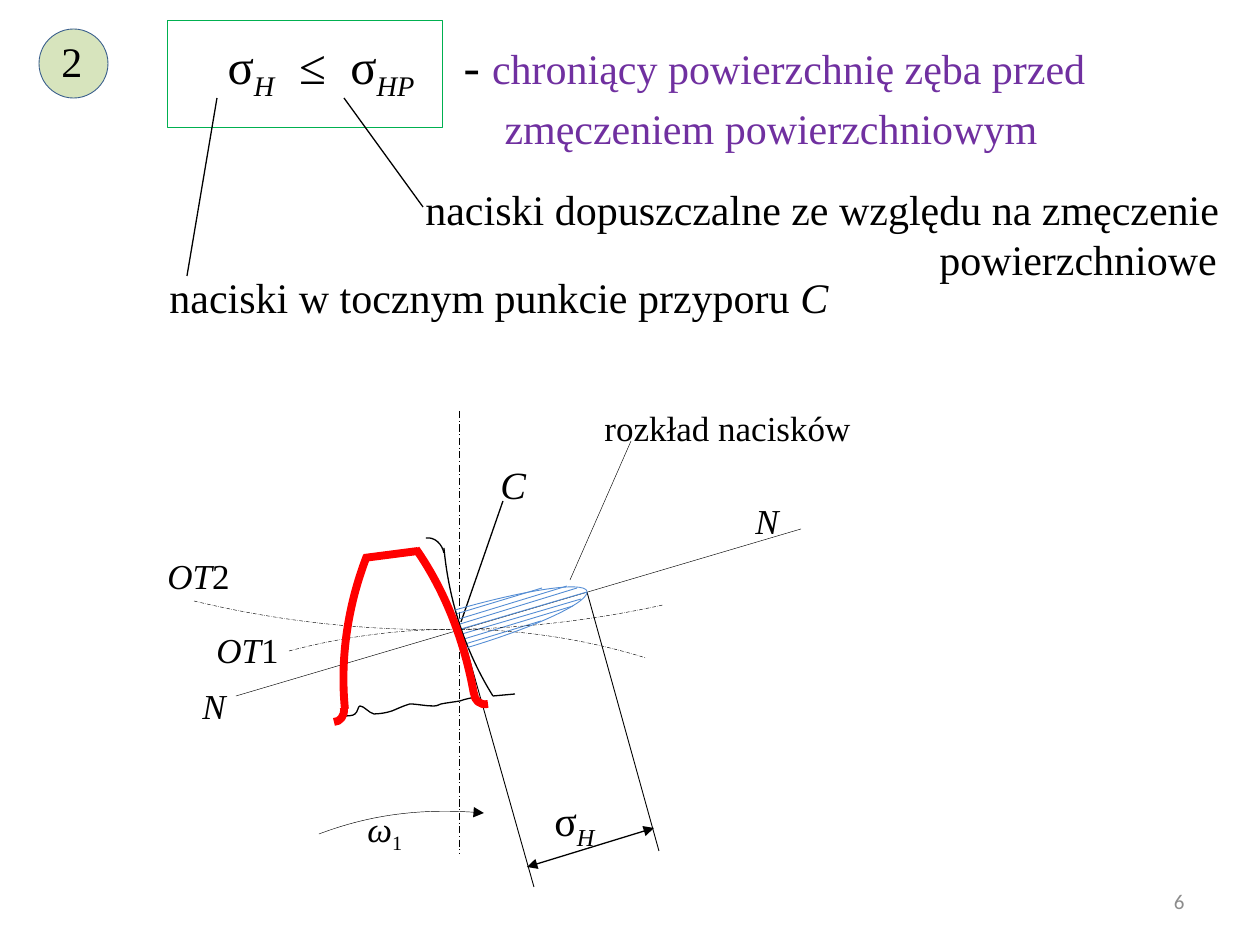
import math

from lxml import etree
from pptx import Presentation
from pptx.dml.color import RGBColor
from pptx.enum.dml import MSO_LINE
from pptx.enum.shapes import MSO_CONNECTOR, MSO_SHAPE
from pptx.enum.text import MSO_ANCHOR, MSO_AUTO_SIZE, PP_ALIGN
from pptx.oxml.ns import qn
from pptx.util import Emu, Pt

SCALE = 914400 / 126
STRAIGHT = MSO_CONNECTOR.STRAIGHT
AXIS_DASH = MSO_LINE.LONG_DASH_DOT
COLORS = {"ink": "000000", "violet": "7030A0", "frame": "00B050", "badge": "D7E4BD",
          "badge_edge": "3A5F8C", "pressure": "548DD4", "tooth": "FF0000",
          "paper": "FFFFFF", "number": "8C8C8C"}
SERIF = "Times New Roman"
# Extra letter spacing in points, by flag
SPACING = {"w": 7, "W": 21}

# A span is (text, flags): i = italic, s = subscript, v = violet 24 pt, w and W = widened.
CONDITION = {
    "at": (166, 29, 1017, 123), "size": 28, "indents": (49, 326),
    "paragraphs": [
        [("σ", ""), ("H", "is"), (" ", "w"), ("≤", "i"), (" ", "w"), ("σ", ""), ("HP", "is"),
         (" ", "W"), ("- ", "i"), ("chroniący powierzchnię zęba przed", "v")],
        [("zmęczeniem powierzchniowym", "v")],
    ],
}
# Texts: box, size, paragraphs, left indent of each paragraph
NOTES = [
    ((49, 29, 118, 63), 24, [[("2", "")]], (0,)),
    ((157, 265, 709, 63), 24,
     [[("naciski w tocznym punkcie przyporu ", ""), ("C", "i")]], (0,)),
    ((413, 177, 847, 115), 24,
     [[("naciski dopuszczalne ze względu na zmęczenie", "")], [("powierzchniowe", "")]], (0, 514)),
]
LABELS = [
    ((592, 400, 413, 67), 20, [("rozkład nacisków", "")]),
    ((190, 678, 73, 69), 20, [("N", "i")]),
    ((743, 493, 73, 69), 20, [("N", "i")]),
    ((204, 622, 116, 103), 20, [("OT", "i"), ("1", "")]),
    ((155, 548, 111, 67), 20, [("OT", "i"), ("2", "")]),
    ((355, 801, 129, 79), 20, [("ω", "i"), ("1", "s")]),
    ((542, 788, 115, 82), 24, [("σ", ""), ("H", "is")]),
    ((488, 455, 76, 50), 22, [("C", "i")]),
]

# Lines: start, end, colour, width, dash, arrow ends
LINES = [
    ((217, 98), (187, 276), "ink", 0.75, None, ()),
    ((344, 98), (423, 207), "ink", 0.75, None, ()),
    ((459, 411), (459, 854), "ink", 0.5, AXIS_DASH, ()),
    ((236, 696), (801, 529), "ink", 0.25, None, ()),
    ((515, 694), (493, 696), "ink", 0.75, None, ()),
    ((570, 580), (631, 441), "ink", 0.25, None, ()),
    ((461, 629), (534, 887), "ink", 0.5, None, ()),
    ((587, 592), (659, 851), "ink", 0.5, None, ()),
    ((527, 867), (654, 828), "ink", 0.75, None, ("headEnd", "tailEnd")),
    ((461, 622), (503, 501), "ink", 0.75, None, ()),
    ((364, 558), (418, 551), "tooth", 4.5, None, ()),
]
HATCHING = [
    ((456, 614), (542, 588)), ((459, 619), (567, 586)), ((460, 624), (577, 588)),
    ((461, 629), (587, 592)), ((462, 634), (581, 599)), ((464, 639), (573, 606)),
    ((465, 644), (541, 621)),
]
LINES += [(start, end, "pressure", 0.5, None, ()) for start, end in HATCHING]

# Curves: frame, rotation, start followed by Bézier triples, colour, width, dash, arrow ends
CURVES = [
    ((166, 600, 583, 559), 313.8, [(289, 651), (406, 620), (530, 622), (646, 658)],
     "ink", 0.25, AXIS_DASH, ()),
    ((-105, -163, 979, 726), 60.9, [(194, 601), (347, 638), (508, 639), (663, 605)],
     "ink", 0.25, AXIS_DASH, ()),
    ((447, 527, 343, 163), 356.5, [(493, 696), (465, 651), (449, 601), (444, 548)],
     "ink", 0.75, None, ()),
    ((426, 537, 16, 16), 356.5, [(426, 538), (435, 537), (442, 544), (444, 553)],
     "ink", 0.75, None, ()),
    ((456, 591, 131, 20), 343.6, [(455, 610), (525, 590), (583, 581), (587, 591)],
     "pressure", 0.5, None, ()),
    ((461, 610, 131, 20), 343.6, [(466, 648), (536, 627), (590, 602), (587, 591)],
     "pressure", 0.5, None, ()),
    ((278, 795, 304, 352), 313.9, [(319, 834), (372, 814), (428, 808), (484, 813)],
     "ink", 0.25, None, ("tailEnd",)),
    ((341, 697, 134, 14), 350.2,
     [(343, 716), (348, 716), (353, 716), (355, 714), (358, 712), (358, 706), (360, 706),
      (364, 706), (369, 713), (374, 714), (379, 714), (386, 713), (392, 711),
      (397, 709), (403, 706), (410, 704), (416, 704), (426, 706), (432, 706),
      (437, 706), (436, 706), (441, 704), (446, 703), (454, 702), (460, 701),
      (465, 699), (472, 698), (475, 697)], "ink", 0.75, None, ()),
    ((123, 564, 343, 163), 353.2, [(416, 549), (446, 592), (465, 643), (474, 694)],
     "tooth", 4.5, None, ()),
    ((333, 709, 13, 13), 353.2, [(334, 722), (340, 722), (345, 716), (344, 708)],
     "tooth", 4.5, None, ()),
    ((474, 693, 13, 13), 353.2, [(488, 704), (480, 706), (474, 700), (474, 693)],
     "tooth", 4.5, None, ()),
    ((335, 539, 343, 163), 353.2, [(367, 556), (348, 605), (340, 658), (345, 709)],
     "tooth", 4.5, None, ()),
]


def px(value):
    return Emu(round(value * SCALE))


def color(name):
    return RGBColor.from_string(COLORS[name])


def style_line(line, name, width, dash=None, arrows=()):
    line.color.rgb = color(name)
    line.width = Pt(width)
    if dash:
        line.dash_style = dash
    for end in arrows:
        etree.SubElement(line._get_or_add_ln(), qn("a:" + end), type="triangle")


def add_line(page, start, end, *style):
    connector = page.shapes.add_connector(STRAIGHT, *map(px, start + end))
    style_line(connector.line, *style)
    etree.SubElement(connector._element.spPr, qn("a:effectLst"))


def add_curve(page, frame, rotation, nodes, *style):
    """Draw a Bézier chain, given in page coordinates, inside a rotated frame."""
    left, top, width, height = frame
    builder = page.shapes.build_freeform(px(left), px(top))
    builder.add_line_segments([(px(left + width), px(top + height))], close=False)
    curve = builder.convert_to_shape()
    curve.rotation = rotation
    outline = next(curve._element.iter(qn("a:path")))
    outline.set("fill", "none")
    for child in list(outline):
        outline.remove(child)
    cos, sin = math.cos(math.radians(rotation)), math.sin(math.radians(rotation))
    for index, (x, y) in enumerate(nodes):
        if index == 0:
            command = etree.SubElement(outline, qn("a:moveTo"))
        elif index % 3 == 1:
            command = etree.SubElement(outline, qn("a:cubicBezTo"))
        dx, dy = x - left - width / 2, y - top - height / 2
        etree.SubElement(command, qn("a:pt"), x=str(px(width / 2 + dx * cos + dy * sin)),
                         y=str(px(height / 2 + dy * cos - dx * sin)))
    curve.shadow.inherit = False
    curve.fill.background()
    style_line(curve.line, *style)


def add_preset(page, kind, at, fill, edge):
    shape = page.shapes.add_shape(kind, *map(px, at))
    shape.shadow.inherit = False
    shape.fill.solid()
    shape.fill.fore_color.rgb = color(fill)
    style_line(shape.line, edge, 0.5)


def write_text(box, paragraphs, size, indents=(0,), ink="ink", font=SERIF):
    frame = box.text_frame
    frame.word_wrap = True
    frame.auto_size = MSO_AUTO_SIZE.NONE
    frame.vertical_anchor = MSO_ANCHOR.TOP
    for index, (spans, indent) in enumerate(zip(paragraphs, indents)):
        paragraph = frame.add_paragraph() if index else frame.paragraphs[0]
        paragraph.alignment = PP_ALIGN.LEFT
        properties = paragraph._p.get_or_add_pPr()
        properties.set("marL", str(px(indent)))
        properties.set("indent", "0")
        for text, flags in spans:
            span = paragraph.add_run()
            span.text = text
            span.font.name = font
            span.font.size = Pt(24 if "v" in flags else size)
            span.font.italic = "i" in flags
            span.font.color.rgb = color("violet" if "v" in flags else ink)
            if "s" in flags:
                span._r.get_or_add_rPr().set("baseline", "-25000")
            if flags in SPACING:
                span._r.get_or_add_rPr().set("spc", str(SPACING[flags] * 100))


def add_text(page, at, size, paragraphs, indents=(0,), **style):
    box = page.shapes.add_textbox(*map(px, at))
    write_text(box, paragraphs, size, indents, **style)
    return box


def main():
    deck = Presentation()
    deck.slide_width, deck.slide_height = px(1260), px(945)
    page = deck.slides.add_slide(deck.slide_layouts[5])
    add_preset(page, MSO_SHAPE.RECTANGLE, (167, 20, 276, 108), "paper", "frame")
    add_preset(page, MSO_SHAPE.OVAL, (39, 29, 69, 69), "badge", "badge_edge")

    title = page.shapes.title
    title.left, title.top, title.width, title.height = map(px, CONDITION["at"])
    write_text(title, CONDITION["paragraphs"], CONDITION["size"], CONDITION["indents"])
    page.shapes._spTree.append(title._element)  # in front of the frame

    for note in NOTES:
        add_text(page, *note)
    for line in LINES:
        add_line(page, *line)
    for curve in CURVES:
        add_curve(page, *curve)
    for at, size, spans in LABELS:
        add_text(page, at, size, [spans])
    number = add_text(page, (903, 876, 294, 50), 12, [[("6", "")]], ink="number", font="Calibri")
    number.text_frame.vertical_anchor = MSO_ANCHOR.MIDDLE
    number.text_frame.paragraphs[0].alignment = PP_ALIGN.RIGHT
    deck.save("out.pptx")


if __name__ == "__main__":
    main()
